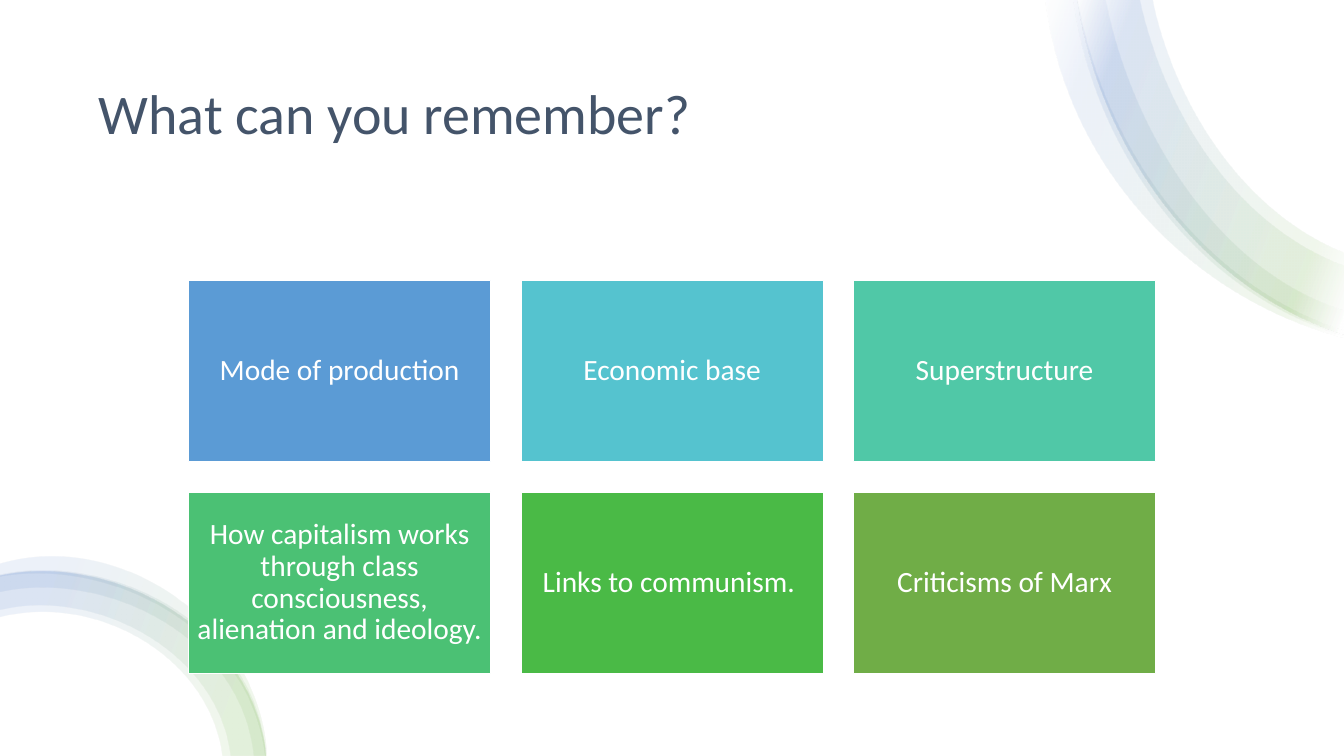
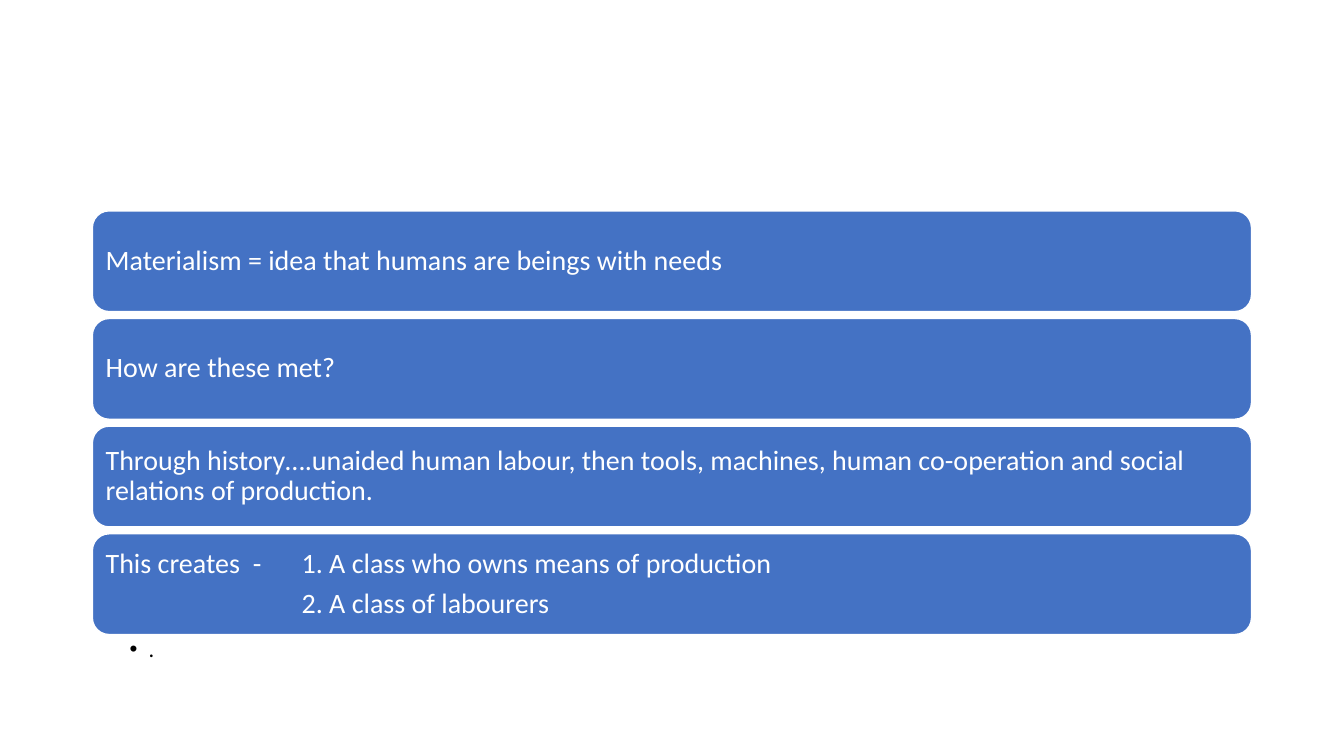
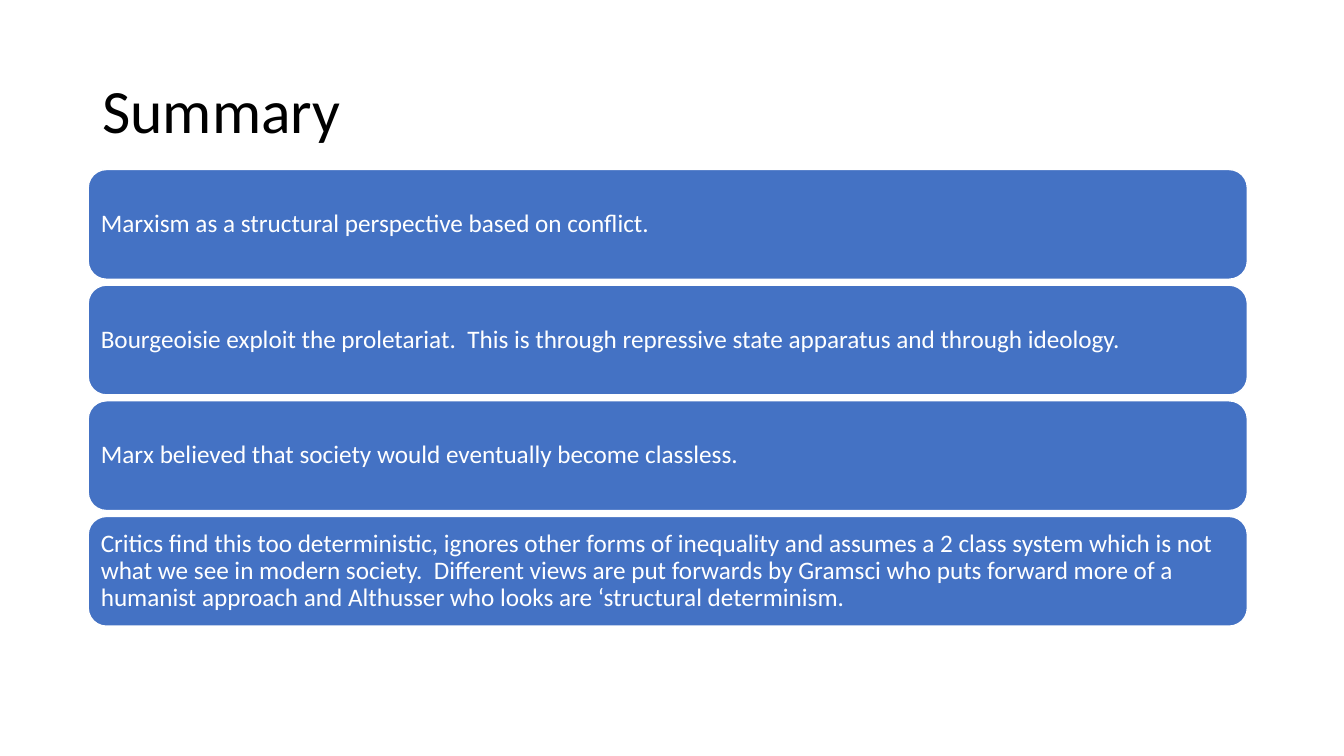
from lxml import etree
from pptx import Presentation
from pptx import util as u
from pptx.dml.color import RGBColor
from pptx.enum import shapes, text
from pptx.oxml import ns

Pt = u.Pt
FONT = "Calibri"
WHITE, BLACK, SLATE, BLUE, GREEN = "FFFFFF", "000000", "44546A", "4472C4", "70AD47"
WIDTH, HEIGHT = 960, 540
LEFT, CENTER = text.PP_ALIGN.LEFT, text.PP_ALIGN.CENTER
RECTANGLE, ROUNDED = shapes.MSO_SHAPE.RECTANGLE, shapes.MSO_SHAPE.ROUNDED_RECTANGLE

# Decorative ribbons: (outer edge, inner edge), each four even points on a curve
CORNER_OUTER = [(769.5, 0), (803, 102), (868.5, 186.5), (960, 239)]
CORNER_RIBBONS = [
    ([(747, 0), (784, 109), (859, 192.5), (960, 241.2)],
     [(770, 0), (805, 101), (870, 184), (960, 236)]),
    (CORNER_OUTER, [(823, 0), (849.2, 73.5), (895.5, 137.5), (960, 180.7)]),
    ([(767, 0), (800, 103), (866.5, 188), (960, 239.8)],
     [(790, 0), (821, 90.5), (878.2, 171), (960, 221.8)]),
    (CORNER_OUTER, [(814, 0), (842, 78.3), (891, 145.5), (960, 190)]),
]
ARCH_OUTER = [(0, 411.8), (84, 417.6), (155, 463.5), (189.4, 540)]
ARCH_RIBBONS = [
    (ARCH_OUTER, [(0, 441.4), (69.5, 443.3), (128.5, 479), (158.4, 540)]),
    (ARCH_OUTER, [(0, 436.3), (71, 439.3), (133, 476.5), (164.2, 540)]),
    ([(0, 411), (84.5, 416.5), (156, 462), (189.4, 540)],
     [(0, 423.4), (79.5, 427.7), (147.5, 469), (180.7, 540)]),
    ([(0, 402.5), (87.5, 406.5), (158.5, 458), (190, 540)],
     [(0, 411.8), (83, 419), (153.5, 464), (188.6, 540)]),
]
ARCH_STOPS = [(16, GREEN), (85, BLUE)]
CORNER_STOPS = [(2, WHITE), *ARCH_STOPS, (100, WHITE)]
RIBBON_OPACITY, RIBBON_ANGLE = 10, 200

# Slide content
TOPICS = [
    ("Mode of production", "5B9BD5"),
    ("Economic base", "55C3CF"),
    ("Superstructure", "50C8A7"),
    ("How capitalism works through class consciousness, alienation and ideology.", "4BC174"),
    ("Links to communism. ", "4ABA46"),
    ("Criticisms of Marx", GREEN),
]
MATERIALISM = [
    "Materialism = idea that humans are beings with needs",
    "How are these met?",
    "Through history….unaided human labour, then tools, machines, "
    "human co-operation and social relations of production.",
    "This creates  - \t1. A class who owns means of production\n"
    "\t\t2. A class of labourers",
]
SUMMARY = [
    "Marxism as a structural perspective based on conflict.",
    "Bourgeoisie exploit the proletariat.  This is through repressive state "
    "apparatus and through ideology.",
    "Marx believed that society would eventually become classless.",
    "Critics find this too deterministic, ignores other forms of inequality and "
    "assumes a 2 class system which is not what we see in modern society.  "
    "Different views are put forwards by Gramsci who puts forward more of a "
    "humanist approach and Althusser who looks are ‘structural determinism.",
]


def rgb(value):
    return RGBColor.from_string(value)


def add_xml(parent, tag, **attributes):
    return etree.SubElement(parent, ns.qn(tag), {k: str(v) for k, v in attributes.items()})


def write(shape, content, size, color=WHITE, align=LEFT, margins=(7.2, 3.6, 7.2, 3.6),
          anchor=text.MSO_ANCHOR.MIDDLE, after=0.35, tabs=(), bullet_indent=None):
    """Fill a shape with text, one paragraph a line."""
    frame = shape.text_frame
    frame.word_wrap = True
    frame.vertical_anchor = anchor
    frame.margin_left, frame.margin_top, frame.margin_right, frame.margin_bottom = map(Pt, margins)
    for index, line in enumerate(content.split("\n")):
        paragraph = frame.add_paragraph() if index else frame.paragraphs[0]
        paragraph.alignment = align
        paragraph.line_spacing = 0.9
        paragraph.space_after = Pt(after * size)
        run = paragraph.add_run()
        run.text = line
        run.font.name, run.font.size = FONT, Pt(size)
        run.font.color.rgb = rgb(color)
        properties = paragraph._p.get_or_add_pPr()
        if bullet_indent:
            properties.set("marL", str(Pt(bullet_indent)))
            properties.set("indent", str(-Pt(bullet_indent)))
            add_xml(properties, "a:buFont", typeface="Arial")
            add_xml(properties, "a:buChar", char="•")
        if tabs:
            stops = add_xml(properties, "a:tabLst")
            for position in tabs:
                add_xml(stops, "a:tab", pos=Pt(position), algn="l")


def add_text(slide, content, box, size, **options):
    write(slide.shapes.add_textbox(*map(Pt, box)), content, size, **options)


def add_title(slide, content, box, size, color):
    add_text(slide, content, box, size, color=color, after=0)


def add_panel(slide, kind, box, fill):
    """Add a filled shape without outline or shadow."""
    shape = slide.shapes.add_shape(kind, *map(Pt, box))
    shape.shadow.inherit = False
    shape.fill.solid()
    shape.fill.fore_color.rgb = rgb(fill)
    shape.line.fill.background()
    return shape


def add_block(slide, kind, content, box, size, fill, inset, **options):
    shape = add_panel(slide, kind, box, fill)
    shape.line.color.rgb = rgb(WHITE)
    shape.line.width = Pt(1)
    write(shape, content, size, margins=(inset,) * 4, **options)


def add_bars(slide, contents, left, top, height, pitch, size, inset):
    """Stack rounded bars at an equal pitch."""
    for row, content in enumerate(contents):
        add_block(slide, ROUNDED, content, (left, top + row * pitch, 828, height),
                  size, BLUE, inset, tabs=(70, 140))


def bezier(points):
    """Return the two handles and the end of a cubic through four even points."""
    def mix(*weights):
        return tuple(sum(w * v for w, v in zip(weights, axis)) / 6 for axis in zip(*points))
    return [mix(-5, 18, -9, 2), mix(2, -9, 18, -5), points[-1]]


def add_ribbon(slide, outer, inner, colors):
    inner = inner[::-1]
    corners = [(Pt(x), Pt(y)) for x, y in outer + inner]
    builder = slide.shapes.build_freeform(*corners[0])
    builder.add_line_segments(corners[1:], close=True)
    ribbon = builder.convert_to_shape()
    ribbon.shadow.inherit = False
    ribbon.line.fill.background()
    # Curved edges
    outline = ribbon._element.spPr.find(".//" + ns.qn("a:path"))
    for child in list(outline):
        outline.remove(child)
    for tag, points in (("a:moveTo", outer[:1]), ("a:cubicBezTo", bezier(outer)),
                        ("a:lnTo", inner[:1]), ("a:cubicBezTo", bezier(inner))):
        segment = add_xml(outline, tag)
        for x, y in points:
            add_xml(segment, "a:pt", x=Pt(x) - ribbon.left, y=Pt(y) - ribbon.top)
    add_xml(outline, "a:close")
    # Translucent gradient
    ribbon.fill.gradient()
    gradient = ribbon._element.spPr.find(ns.qn("a:gradFill"))
    for child in list(gradient):
        gradient.remove(child)
    stops = add_xml(gradient, "a:gsLst")
    for position, color in colors:
        stop = add_xml(stops, "a:gs", pos=position * 1000)
        add_xml(add_xml(stop, "a:srgbClr", val=color), "a:alpha", val=RIBBON_OPACITY * 1000)
    add_xml(gradient, "a:lin", ang=RIBBON_ANGLE * 60000, scaled=0)


def build_topics(slide):
    add_panel(slide, RECTANGLE, (0, 0, WIDTH, HEIGHT), WHITE)
    add_title(slide, "What can you remember?", (63.4, 36, 833, 93.6), 40, SLATE)
    for ribbons, colors in ((CORNER_RIBBONS, CORNER_STOPS), (ARCH_RIBBONS, ARCH_STOPS)):
        for outer, inner in ribbons:
            add_ribbon(slide, outer, inner, colors)
    # Grid of three columns
    for index, (topic, fill) in enumerate(TOPICS):
        row, column = divmod(index, 3)
        box = (134.6 + column * 237.5, 200.2 + row * 151.2, 216, 129.6)
        add_block(slide, RECTANGLE, topic, box, 21, fill, 6.4, align=CENTER)


def build_materialism(slide):
    add_bars(slide, MATERIALISM, left=66, top=150.6, height=72, pitch=76.9, size=20, inset=6)
    add_text(slide, ".", (66, 453.6, 828, 26), 16, color=BLACK, after=0.2, bullet_indent=13.7,
             margins=(26.6, 2, 11.5, 2), anchor=text.MSO_ANCHOR.TOP)


def build_summary(slide):
    add_title(slide, "Summary", (66, 28.8, 828, 104.4), 44, BLACK)
    add_bars(slide, SUMMARY, left=63, top=121.1, height=78.4, pitch=82.6, size=18, inset=5.2)


def main():
    presentation = Presentation()
    presentation.slide_width, presentation.slide_height = Pt(WIDTH), Pt(HEIGHT)
    for build in (build_topics, build_materialism, build_summary):
        build(presentation.slides.add_slide(presentation.slide_layouts[6]))
    presentation.save("out.pptx")


if __name__ == "__main__":
    main()
